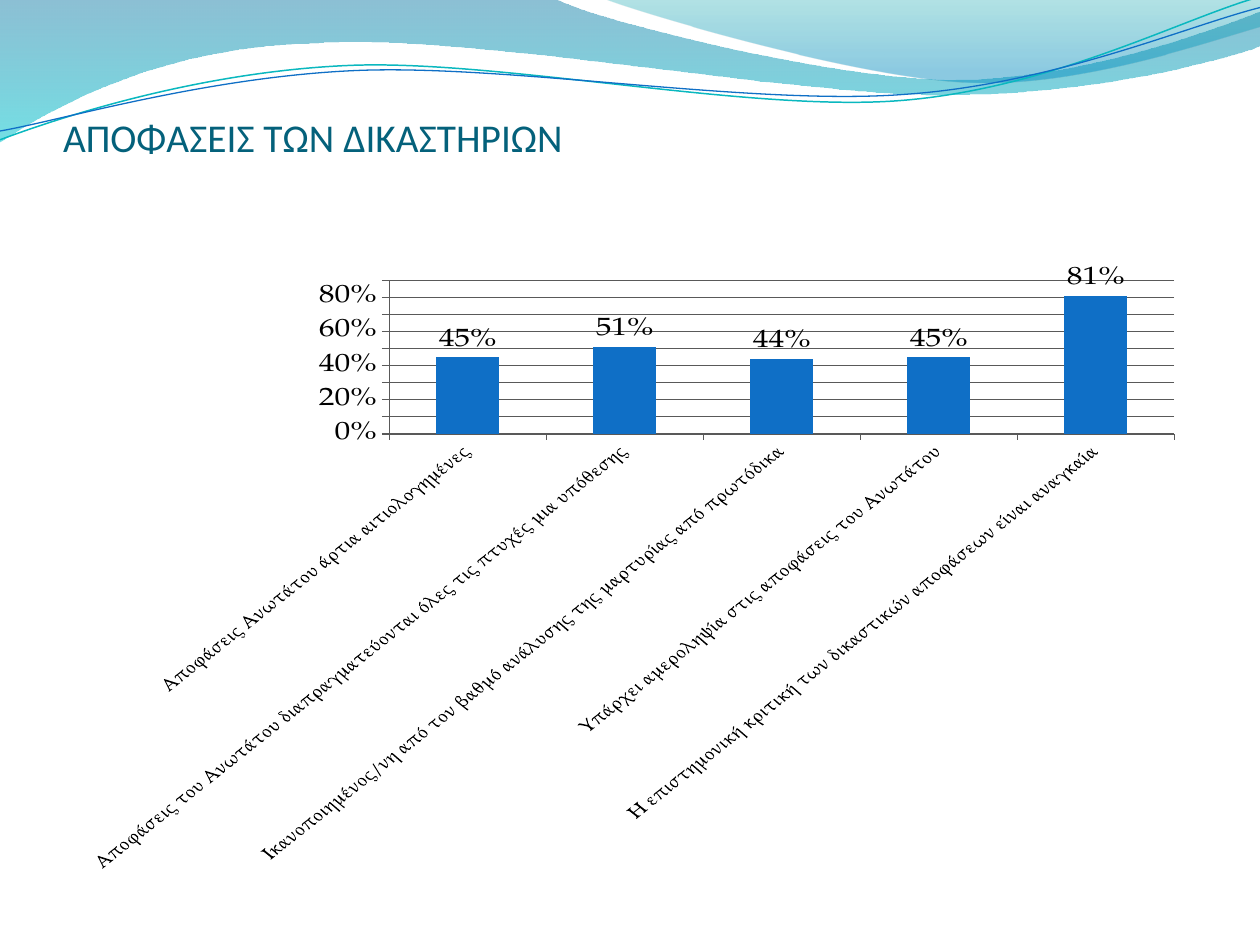
import pptx
import pptx.chart.data
import pptx.dml.color
import pptx.enum.chart
import pptx.enum.text
import pptx.oxml
import pptx.oxml.ns
import pptx.util
from pptx.util import Inches

UNITS = 1000  # outline units per inch


def rgb(value):
    return pptx.dml.color.RGBColor.from_string(value)


def set_all(obj, values):
    for name, value in values.items():
        setattr(obj, name, value)


class SlideBuilder:
    heading_font = "Calibri"
    body_font = "TeX Gyre Pagella"
    heading = "04617B"
    accent = "0F6FC6"
    text = "000000"
    axis = "595959"

    def __init__(self, prs):
        self.s = prs.slides.add_slide(prs.slide_layouts[5])

    def outline(self, start, segments, close):
        """Draw segments of two numbers (line) or six (cubic curve)."""
        fb = self.s.shapes.build_freeform(
            *(round(v * UNITS) for v in start), scale=Inches(1) / UNITS)
        points = [(round(seg[i] * UNITS), round(seg[i + 1] * UNITS))
                  for seg in segments for i in range(0, len(seg), 2)]
        fb.add_line_segments(points, close=close)
        sp = fb.convert_to_shape()
        sp.shadow.inherit = False
        # Join each three points of a curve into one cubic segment
        lines = sp.element.findall(".//" + pptx.oxml.ns.qn("a:lnTo"))
        for seg in segments:
            count = len(seg) // 2
            group, lines = lines[:count], lines[count:]
            if count == 3:
                curve = pptx.oxml.parse_xml(
                    f'<a:cubicBezTo {pptx.oxml.ns.nsdecls("a")}/>')
                group[0].addprevious(curve)
                for line in group:
                    curve.append(line[0])
                    line.getparent().remove(line)
        return sp

    def wave(self, start, segments, stops):
        sp = self.outline(start, segments, True)
        sp.line.fill.background()
        sp.fill.gradient()
        sp.fill.gradient_angle = 270
        for stop, (position, color, alpha) in zip(sp.fill.gradient_stops, stops):
            stop.position = position
            stop.color.rgb = rgb(color)
            for clr in sp.element.iter(pptx.oxml.ns.qn("a:srgbClr")):
                if clr.get("val") == color:
                    clr.append(pptx.oxml.parse_xml(
                        f'<a:alpha {pptx.oxml.ns.nsdecls("a")} val="{alpha * 1000}"/>'))

    def ribbon(self, start, segments, color, width):
        sp = self.outline(start, segments, False)
        sp.fill.background()
        sp.line.color.rgb = rgb(color)
        sp.line.width = pptx.util.Pt(width)

    def title(self, text):
        sp = self.s.shapes.title
        set_all(sp, {"left": Inches(0.5), "top": Inches(0.77),
                     "width": Inches(9), "height": Inches(1.25)})
        tf = sp.text_frame
        set_all(tf, {"margin_left": 0, "margin_right": 0,
                     "margin_top": Inches(0.05), "margin_bottom": Inches(0.75),
                     "vertical_anchor": pptx.enum.text.MSO_ANCHOR.BOTTOM,
                     "auto_size": pptx.enum.text.MSO_AUTO_SIZE.NONE,
                     "word_wrap": True})
        p = tf.paragraphs[0]
        p.alignment = pptx.enum.text.PP_ALIGN.LEFT
        r = p.add_run()
        r.text = text
        self.font(r.font, self.heading_font, 22.5, self.heading)
        # Keep the title in front of the waves
        sp.element.getparent().append(sp.element)

    def font(self, font, name, size, color):
        set_all(font, {"name": name, "size": pptx.util.Pt(size)})
        font.color.rgb = rgb(color)

    def column_chart(self, values):
        data = pptx.chart.data.CategoryChartData(number_format="0%")
        data.categories = list(values)
        data.add_series("Series 1", list(values.values()))
        chart = self.s.shapes.add_chart(
            pptx.enum.chart.XL_CHART_TYPE.COLUMN_CLUSTERED,
            Inches(0.5), Inches(2.12), Inches(9), Inches(4.8), data).chart
        set_all(chart, {"has_legend": False, "has_title": False})
        self.font(chart.font, self.body_font, 18, self.text)

        # Columns and their labels
        plot = chart.plots[0]
        set_all(plot, {"gap_width": 150, "vary_by_categories": False,
                       "has_data_labels": True})
        set_all(plot.data_labels, {
            "show_value": True, "number_format": "0%",
            "number_format_is_linked": False,
            "position": pptx.enum.chart.XL_LABEL_POSITION.OUTSIDE_END})
        self.font(plot.data_labels.font, self.body_font, 18, self.text)
        fill = plot.series[0].format.fill
        fill.solid()
        fill.fore_color.rgb = rgb(self.accent)

        # Axes
        value_axis, category_axis = chart.value_axis, chart.category_axis
        set_all(value_axis, {"minimum_scale": 0, "maximum_scale": 0.9,
                             "major_unit": 0.1, "has_major_gridlines": True})
        set_all(value_axis.tick_labels, {"number_format": "0%",
                                         "number_format_is_linked": False})
        for axis, size in ((value_axis, 18), (category_axis, 12)):
            axis.major_tick_mark = pptx.enum.chart.XL_TICK_MARK.OUTSIDE
            axis.format.line.color.rgb = rgb(self.axis)
            self.font(axis.tick_labels.font, self.body_font, size, self.text)
        value_axis.major_gridlines.format.line.color.rgb = rgb(self.axis)
        # Slanted category labels
        body = category_axis._element.find(
            pptx.oxml.ns.qn("c:txPr")).find(pptx.oxml.ns.qn("a:bodyPr"))
        body.set("rot", str(-45 * 60000))
        body.set("vert", "horz")


def main():
    prs = pptx.Presentation()
    set_all(prs, {"slide_width": Inches(10), "slide_height": Inches(7.5)})
    slide = SlideBuilder(prs)

    # Waves across the top
    slide.wave((0, 0), [(4.4, -0.01),
                        (4.76, 0.17, 6.64, 0.63, 7.58, 0.63),
                        (8.53, 0.63, 9.58, 0.26, 10, 0.09),
                        (10.01, 0.36),
                        (9.83, 0.44, 8.7, 0.76, 7.46, 0.75),
                        (6.22, 0.75, 3.82, 0.28, 2.57, 0.34),
                        (1.29, 0.36, 0.46, 0.83, -0.01, 1.13),
                        (0, 0)],
               [(0, "0074A1", 45), (1, "00C6CF", 55)])
    slide.wave((4.79, -0.01), [(5.09, 0.11, 6.82, 0.62, 7.69, 0.65),
                               (8.56, 0.69, 9.61, 0.32, 10, 0.21),
                               (10, 0), (4.79, -0.01)],
               [(0, "00A1A9", 30), (0.8, "008BBF", 45)])

    # Thin ribbons
    slide.ribbon((0, 1.11), [(0.48, 0.93, 1.58, 0.57, 2.77, 0.52),
                             (3.95, 0.47, 5.93, 0.89, 7.13, 0.8),
                             (8.33, 0.71, 9.38, 0.15, 9.98, -0.02)],
                 "0AB8BF", 0.85)
    slide.ribbon((0, 1.04), [(0.47, 0.96, 1.64, 0.61, 2.83, 0.56),
                             (4.03, 0.51, 5.97, 0.84, 7.17, 0.75),
                             (8.36, 0.67, 9.41, 0.21, 10, 0.06)],
                 slide.accent, 0.75)

    # Title and chart
    slide.title("ΑΠΟΦΑΣΕΙΣ ΤΩΝ ΔΙΚΑΣΤΗΡΙΩΝ")
    slide.column_chart({
        "Αποφάσεις Ανωτάτου άρτια αιτιολογημένες": 0.45,
        "Αποφάσεις του Ανωτάτου διαπραγματεύονται όλες τις πτυχές μια υπόθεσης": 0.51,
        "Ικανοποιημένος/νη από τον βαθμό ανάλυσης της μαρτυρίας από πρωτόδικα": 0.44,
        "Υπάρχει αμεροληψία στις αποφάσεις του Ανωτάτου": 0.45,
        "Η επιστημονική κριτική των δικαστικών αποφάσεων είναι αναγκαία": 0.81,
    })
    prs.save("out.pptx")


if __name__ == "__main__":
    main()
